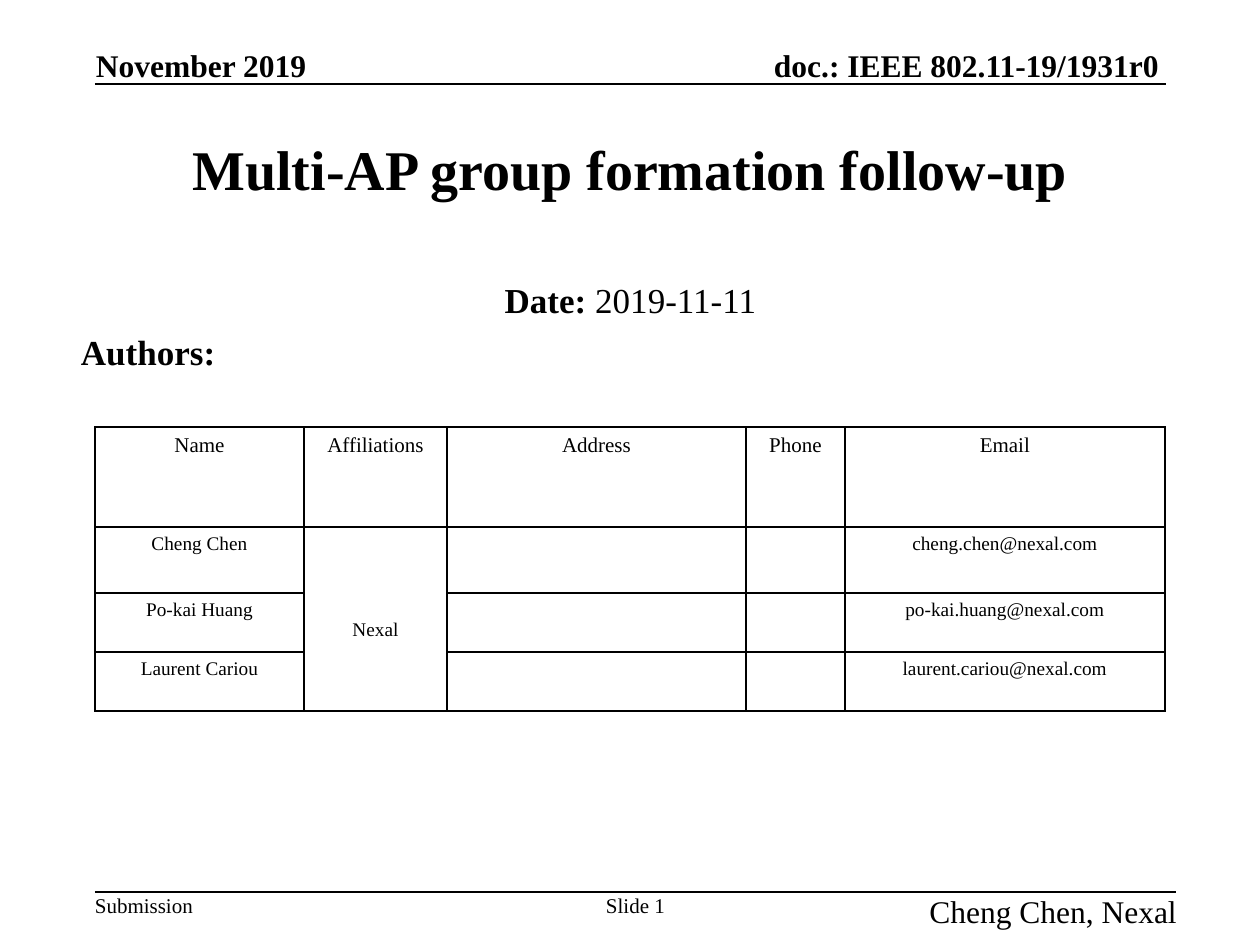
from lxml.etree import SubElement
from pptx import Presentation
from pptx.dml.color import RGBColor
from pptx.enum.shapes import MSO_CONNECTOR
from pptx.enum.text import MSO_ANCHOR, PP_ALIGN
from pptx.oxml import parse_xml
from pptx.oxml.ns import nsdecls, qn
from pptx.util import Emu, Pt

COLORS = {"ink": "000000", "paper": "FFFFFF"}
FONT = "Times New Roman"
EMU_PER_PX = 914400 / 126
LEFT, CENTER, RIGHT = PP_ALIGN.LEFT, PP_ALIGN.CENTER, PP_ALIGN.RIGHT
TOP, MIDDLE, BOTTOM = MSO_ANCHOR.TOP, MSO_ANCHOR.MIDDLE, MSO_ANCHOR.BOTTOM


def px(length):
    return Emu(round(length * EMU_PER_PX))


class SlideBuilder:
    def __init__(self, slide):
        self.slide = slide
        self.ink = RGBColor.from_string(COLORS["ink"])
        fill = slide.background.fill
        fill.solid()
        fill.fore_color.rgb = RGBColor.from_string(COLORS["paper"])

    def style(self, paragraph, size, align, bold=None):
        paragraph.alignment = align
        font = paragraph.font
        font.name, font.size, font.bold = FONT, Pt(size), bold
        font.color.rgb = self.ink

    def text(self, box, parts, size, align=LEFT, anchor=TOP, padded=False):
        """Add one line of text; parts is a list of (text, bold) pairs."""
        shape = self.slide.shapes.add_textbox(*map(px, box))
        frame = shape.text_frame
        frame.word_wrap = padded
        frame.vertical_anchor = anchor
        frame.margin_left = frame.margin_right = px(13 if padded else 0)
        frame.margin_top = frame.margin_bottom = px(6 if padded else 0)
        paragraph = frame.paragraphs[0]
        mixed = len({bold for _, bold in parts}) > 1
        self.style(paragraph, size, align, None if mixed else parts[0][1])
        for words, bold in parts:
            run = paragraph.add_run()
            run.text = words
            if mixed:
                run.font.bold = bold

    def line(self, left, right, y):
        connector = self.slide.shapes.add_connector(
            MSO_CONNECTOR.STRAIGHT, px(left), px(y), px(right), px(y))
        connector.line.color.rgb = self.ink
        connector.line.width = Pt(1)
        SubElement(connector._element.spPr, qn("a:effectLst"))

    def border(self, cell):
        properties = cell._tc.get_or_add_tcPr()
        for index, side in enumerate(("lnL", "lnR", "lnT", "lnB")):
            properties.insert(index, parse_xml(
                f'<a:{side} {nsdecls("a")} w="{Pt(1)}"><a:solidFill>'
                f'<a:srgbClr val="{COLORS["ink"]}"/></a:solidFill></a:{side}>'))

    def table(self, left, top, widths, heights, rows):
        frame = self.slide.shapes.add_table(
            len(rows), len(widths), px(left), px(top), px(sum(widths)), px(sum(heights)))
        table = frame.table
        table.first_row = table.horz_banding = False
        for column, width in zip(table.columns, widths):
            column.width = px(width)
        for row, height in zip(table.rows, heights):
            row.height = px(height)
        for row_index, row in enumerate(rows):
            for column_index, words in enumerate(row):
                cell = table.cell(row_index, column_index)
                cell.text = words
                cell.fill.background()
                self.border(cell)
                self.style(cell.text_frame.paragraphs[0], 11 if row_index else 12, CENTER)
        return table


def main():
    presentation = Presentation()
    presentation.slide_width, presentation.slide_height = px(1260), px(945)
    builder = SlideBuilder(presentation.slides.add_slide(presentation.slide_layouts[6]))

    builder.text((707, 46, 452, 38), [("doc.: IEEE 802.11-19/1931r0", True)], 18, RIGHT, BOTTOM)
    builder.line(95, 1166, 84)
    builder.text((95, 893, 100, 25), [("Submission", False)], 12)
    builder.line(95, 1176, 892)
    builder.text((599, 893, 73, 25), [("Slide 1", False)], 12, CENTER)
    builder.text((95, 95, 1071, 147), [("Multi-AP group formation follow-up", True)],
                 32, CENTER, MIDDLE, padded=True)
    builder.text((95, 273, 1071, 53), [("Date:", True), (" 2019-11-11", False)],
                 20, CENTER, padded=True)
    builder.text((68, 325, 199, 53), [("Authors:", True)], 20, padded=True)
    builder.text((877, 892, 300, 38), [("Cheng Chen, Nexal", False)], 18, RIGHT)

    authors = ("Cheng Chen", "Po-kai Huang", "Laurent Cariou")
    rows = [("Name", "Affiliations", "Address", "Phone", "Email")]
    for index, author in enumerate(authors):
        email = author.lower().replace(" ", ".") + "@nexal.com"
        rows.append((author, "" if index else "Nexal", "", "", email))
    table = builder.table(95, 427, (209, 143, 299, 99, 320), (100, 66, 59, 59), rows)
    affiliation = table.cell(1, 1)
    affiliation.merge(table.cell(3, 1))
    affiliation.vertical_anchor = MIDDLE
    affiliation.margin_top = px(28)

    builder.text((96, 46, 213, 38), [("November 2019", True)], 18, LEFT, BOTTOM)
    presentation.save("out.pptx")


if __name__ == "__main__":
    main()
